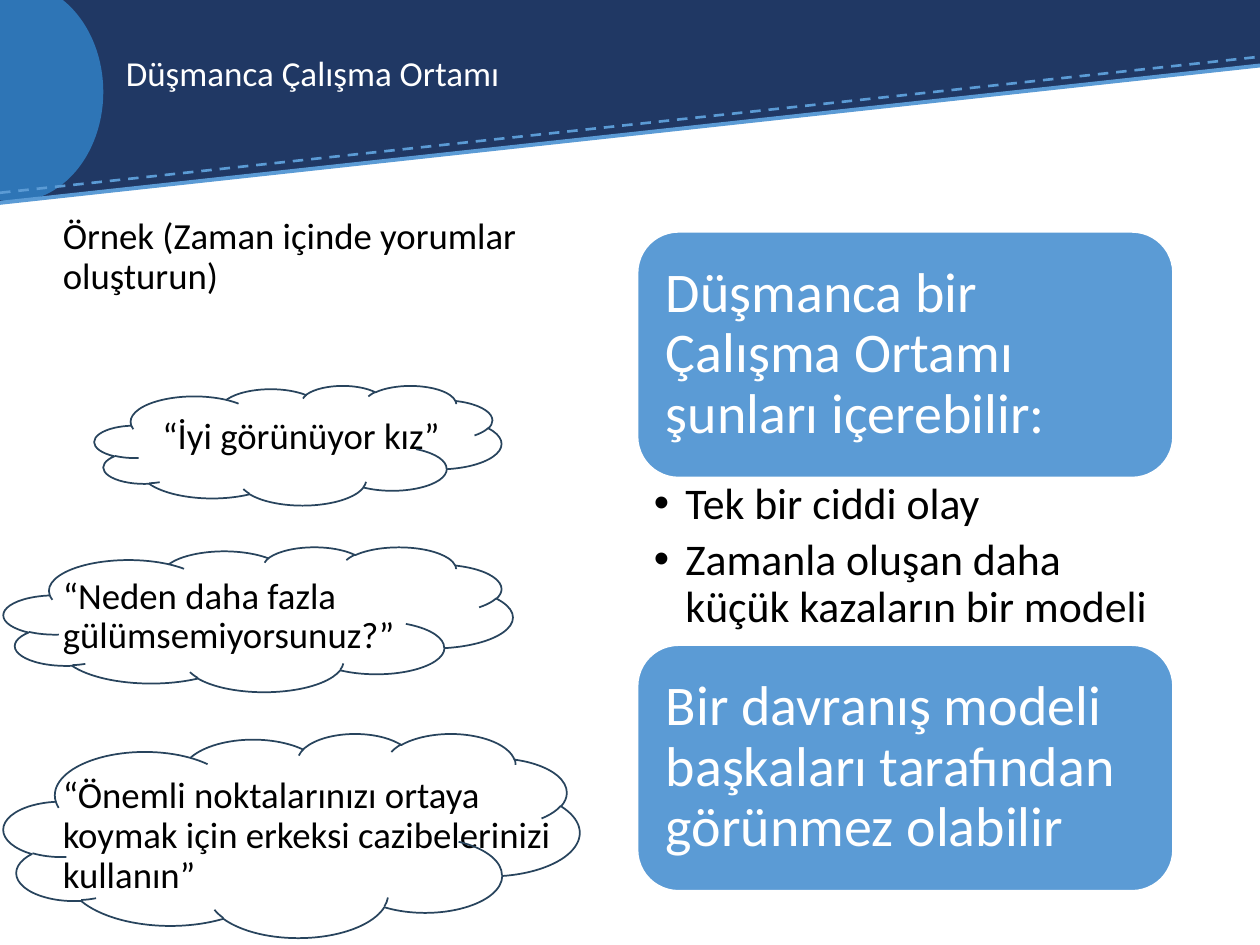
from lxml.etree import SubElement
from pptx import Presentation
from pptx.dml.color import RGBColor
from pptx.enum.dml import MSO_LINE
from pptx.enum.shapes import MSO_CONNECTOR, MSO_SHAPE
from pptx.enum.text import MSO_ANCHOR, PP_ALIGN
from pptx.oxml.ns import qn
from pptx.util import Inches, Pt

COLORS = {
    "navy": "203864",
    "blue": "2E75B6",
    "sky": "5B9BD5",
    "outline": "28445D",
    "white": "FFFFFF",
    "black": "000000",
}
FONT = "Calibri"


def color(name):
    return RGBColor.from_string(COLORS[name])


def add_shape(slide, kind, box, fill=None, line=None):
    shape = slide.shapes.add_shape(kind, *map(Inches, box))
    shape.shadow.inherit = False
    if fill:
        shape.fill.solid()
        shape.fill.fore_color.rgb = color(fill)
    else:
        shape.fill.background()
    if line:
        shape.line.color.rgb = color(line)
        shape.line.width = Pt(1)
    else:
        shape.line.fill.background()
    return shape


def add_line(slide, start, end, width, dash=None):
    line = slide.shapes.add_connector(
        MSO_CONNECTOR.STRAIGHT, *map(Inches, (*start, *end)))
    line.line.color.rgb = color("sky")
    line.line.width = Pt(width)
    if dash:
        line.line.dash_style = dash
    SubElement(line._element.spPr, qn("a:effectLst"))


def add_text_box(slide, box):
    text_box = slide.shapes.add_textbox(*map(Inches, box))
    text_box.text_frame.word_wrap = True
    return text_box.text_frame


def set_margins(text_frame, left, top, right, bottom):
    text_frame.margin_left = Inches(left)
    text_frame.margin_top = Inches(top)
    text_frame.margin_right = Inches(right)
    text_frame.margin_bottom = Inches(bottom)


def format_text(text_frame, size, font_color):
    for paragraph in text_frame.paragraphs:
        paragraph.alignment = PP_ALIGN.LEFT
        paragraph.line_spacing = 0.9
        for run in paragraph.runs:
            run.font.name = FONT
            run.font.size = Pt(size)
            run.font.color.rgb = color(font_color)


def indent(paragraph, left, first=0.0, bullet=None):
    properties = paragraph._p.get_or_add_pPr()
    properties.set("marL", str(Inches(left)))
    properties.set("indent", str(Inches(first)))
    if bullet:
        SubElement(properties, qn("a:buFont"), typeface="Arial")
        SubElement(properties, qn("a:buChar"), char=bullet)


def add_header(slide, box, title):
    left, top, width, height = box
    right, shallow = left + width, 0.52
    # Slanted band
    add_shape(slide, MSO_SHAPE.RECTANGLE, (left, top, width, shallow), "navy")
    wedge = add_shape(slide, MSO_SHAPE.RIGHT_TRIANGLE,
                      (left, top + shallow - 0.01, width, height - shallow + 0.01), "navy")
    wedge._element.spPr.xfrm.set("flipV", "1")
    add_shape(slide, MSO_SHAPE.OVAL, (left - 0.59, top - 0.14, 1.41, 1.74), "blue")
    # Edge lines
    add_line(slide, (left, top + height - 0.07), (right, top + shallow - 0.07),
             1.5, MSO_LINE.DASH)
    add_line(slide, (left, top + height + 0.01), (right, top + shallow), 2.25)
    # Title
    text_frame = add_text_box(slide, (left + 0.9, top + 0.2, 8.07, 0.8))
    text_frame.vertical_anchor = MSO_ANCHOR.MIDDLE
    text_frame.text = title
    format_text(text_frame, 20, "white")


def add_examples(slide, box, heading, quotes):
    left, top, width, height = box
    text_frame = add_text_box(slide, box)
    text_frame.text = "\n".join([heading, *quotes])
    for paragraph in text_frame.paragraphs[1:]:
        paragraph.space_before = Pt(68.7)
    indent(text_frame.paragraphs[1], 0.79)
    format_text(text_frame, 21, "black")
    # Clouds around the quotes
    clouds = [(0.35, 1.38, 3.23, 0.95), (-0.37, 2.66, 4.04, 1.15),
              (-0.37, 4.14, 4.57, 1.62)]
    for x, y, cloud_width, cloud_height in clouds:
        add_shape(slide, MSO_SHAPE.CLOUD,
                  (left + x, top + y, cloud_width, cloud_height), line="outline")


def add_panel(slide, box, text):
    panel = add_shape(slide, MSO_SHAPE.ROUNDED_RECTANGLE, box, "sky", "white")
    text_frame = panel.text_frame
    text_frame.word_wrap = True
    text_frame.vertical_anchor = MSO_ANCHOR.MIDDLE
    set_margins(text_frame, 0.13, 0.13, 0.13, 0.13)
    text_frame.text = text
    format_text(text_frame, 32, "white")


def add_summary(slide, box, top_text, bullets, bottom_text):
    left, top, width, height = box
    panel_height = 1.95
    add_panel(slide, (left, top, width, panel_height), top_text)
    # Bullets fill the space between the panels
    text_frame = add_text_box(
        slide, (left, top + panel_height, width, height - 2 * panel_height))
    set_margins(text_frame, 0.13, 0.03, 0.19, 0.03)
    text_frame.text = "\n".join(bullets)
    for paragraph in text_frame.paragraphs:
        paragraph.space_after = Pt(5)
        indent(paragraph, 0.25, -0.25, "•")
    format_text(text_frame, 25, "black")
    add_panel(slide, (left, top + height - panel_height, width, panel_height), bottom_text)


def main():
    presentation = Presentation()
    presentation.slide_width = Inches(10)
    presentation.slide_height = Inches(7.5)
    slide = presentation.slides.add_slide(presentation.slide_layouts[6])
    add_header(slide, (0, 0, 10, 1.6), "Düşmanca Çalışma Ortamı")
    add_summary(
        slide, (5.06, 1.84, 4.25, 5.23),
        "Düşmanca bir Çalışma Ortamı şunları içerebilir:",
        ["Tek bir ciddi olay", "Zamanla oluşan daha küçük kazaların bir modeli"],
        "Bir davranış modeli başkaları tarafından görünmez olabilir")
    add_examples(
        slide, (0.4, 1.68, 4.25, 5.62),
        "Örnek (Zaman içinde yorumlar oluşturun)",
        ["“İyi görünüyor kız”",
         "“Neden daha fazla gülümsemiyorsunuz?”",
         "“Önemli noktalarınızı ortaya koymak için erkeksi cazibelerinizi kullanın”"])
    presentation.save("out.pptx")


if __name__ == "__main__":
    main()
